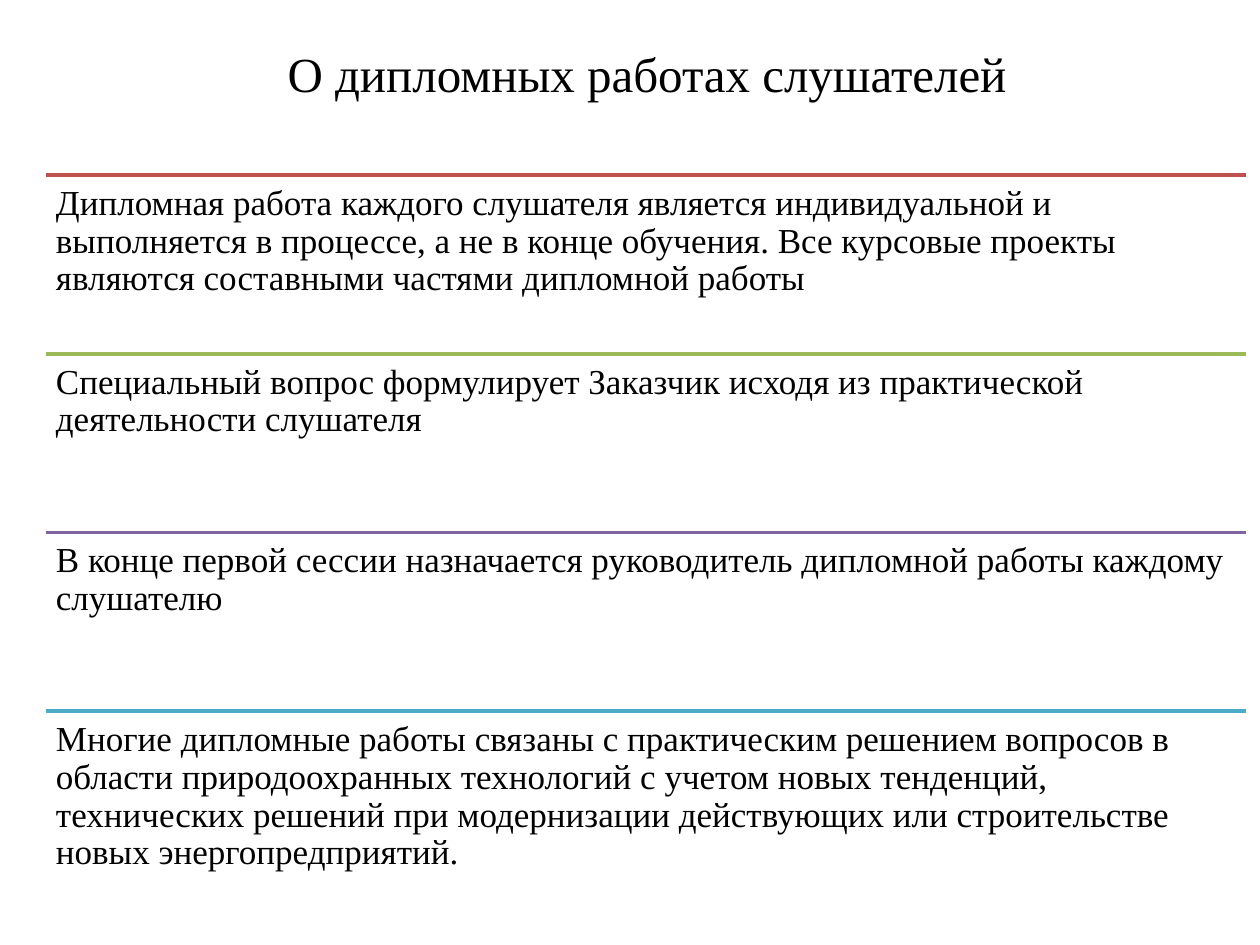
from lxml import etree
from pptx import Presentation
from pptx.dml.color import RGBColor
from pptx.enum.shapes import MSO_CONNECTOR
from pptx.enum.text import PP_ALIGN
from pptx.oxml.ns import qn
from pptx.util import Pt

STRAIGHT = MSO_CONNECTOR.STRAIGHT
LEFT, CENTER = PP_ALIGN.LEFT, PP_ALIGN.CENTER

BLACK = RGBColor(0x00, 0x00, 0x00)
RED = RGBColor(0xC0, 0x50, 0x4D)
GREEN = RGBColor(0x9B, 0xBB, 0x59)
PURPLE = RGBColor(0x80, 0x64, 0xA2)
TEAL = RGBColor(0x4B, 0xAC, 0xC6)
FONT = "Times New Roman"

# Content
TITLE = "О дипломных работах слушателей"
SECTIONS = [
    (RED, "Дипломная работа каждого слушателя является индивидуальной и "
          "выполняется в процессе, а не в конце обучения. Все курсовые проекты "
          "являются составными частями дипломной работы"),
    (GREEN, "Специальный вопрос формулирует Заказчик исходя из практической "
            "деятельности слушателя"),
    (PURPLE, "В конце первой сессии назначается руководитель дипломной работы "
             "каждому слушателю"),
    (TEAL, "Многие дипломные работы связаны с практическим решением вопросов в "
           "области природоохранных технологий с учетом новых тенденций, "
           "технических решений при модернизации действующих или строительстве "
           "новых энергопредприятий."),
]

# Layout in px, 126 to the inch
SCALE = 914400 / 126
PAGE_WIDTH, PAGE_HEIGHT = 1260, 945
TITLE_BOX = (174, 37, 946, 72)
LIST_LEFT, LIST_TOP, LIST_WIDTH, LIST_HEIGHT = 46, 175, 1200, 715


def emu(px):
    return round(px * SCALE)


def add_text(page, text, area, *, size, align=LEFT, inset=(13, 6),
             line_spacing=1.0, before=0, after=0):
    box = page.shapes.add_textbox(*map(emu, area))
    frame = box.text_frame
    frame.word_wrap = True
    frame.margin_left = frame.margin_right = emu(inset[0])
    frame.margin_top = frame.margin_bottom = emu(inset[1])
    para = frame.paragraphs[0]
    para.alignment = align
    para.line_spacing = line_spacing
    para.space_before, para.space_after = Pt(before), Pt(after)
    span = para.add_run()
    span.text = text
    span.font.name, span.font.size = FONT, Pt(size)
    span.font.color.rgb = BLACK


def add_rule(page, left, top, width, color):
    rule = page.shapes.add_connector(
        STRAIGHT, emu(left), emu(top), emu(left + width), emu(top))
    rule.line.color.rgb = color
    rule.line.width = Pt(2)
    etree.SubElement(rule._element.spPr, qn("a:effectLst"))


def main():
    deck = Presentation()
    deck.slide_width, deck.slide_height = emu(PAGE_WIDTH), emu(PAGE_HEIGHT)
    page = deck.slides.add_slide(deck.slide_layouts[6])

    # Ruled sections of equal height
    row_height = LIST_HEIGHT / len(SECTIONS)
    for index, (color, text) in enumerate(SECTIONS):
        top = LIST_TOP + index * row_height
        add_rule(page, LIST_LEFT, top, LIST_WIDTH, color)
        add_text(page, text, (LIST_LEFT, top, LIST_WIDTH, row_height),
                 size=20, inset=(10, 10), line_spacing=0.9, after=7)

    # Title
    add_text(page, TITLE, TITLE_BOX, size=28, align=CENTER, before=5.6)

    deck.save("out.pptx")


if __name__ == "__main__":
    main()
